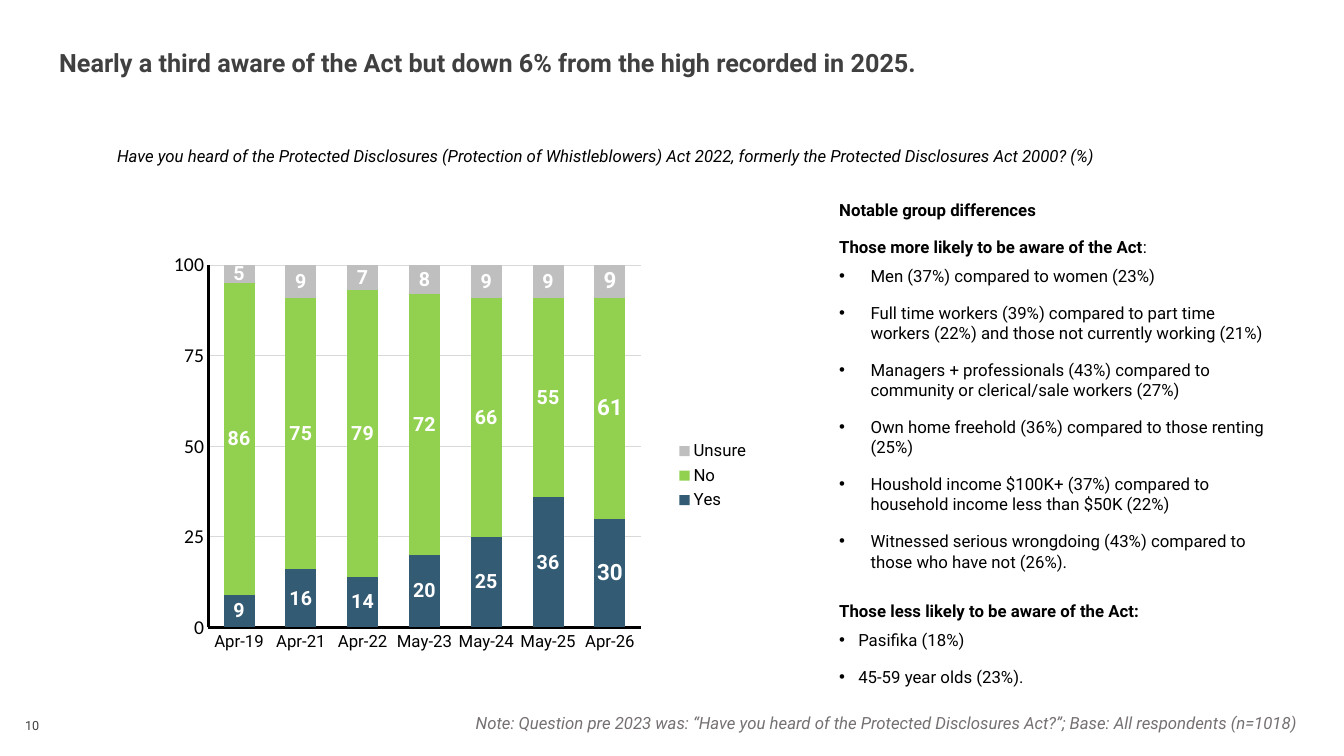
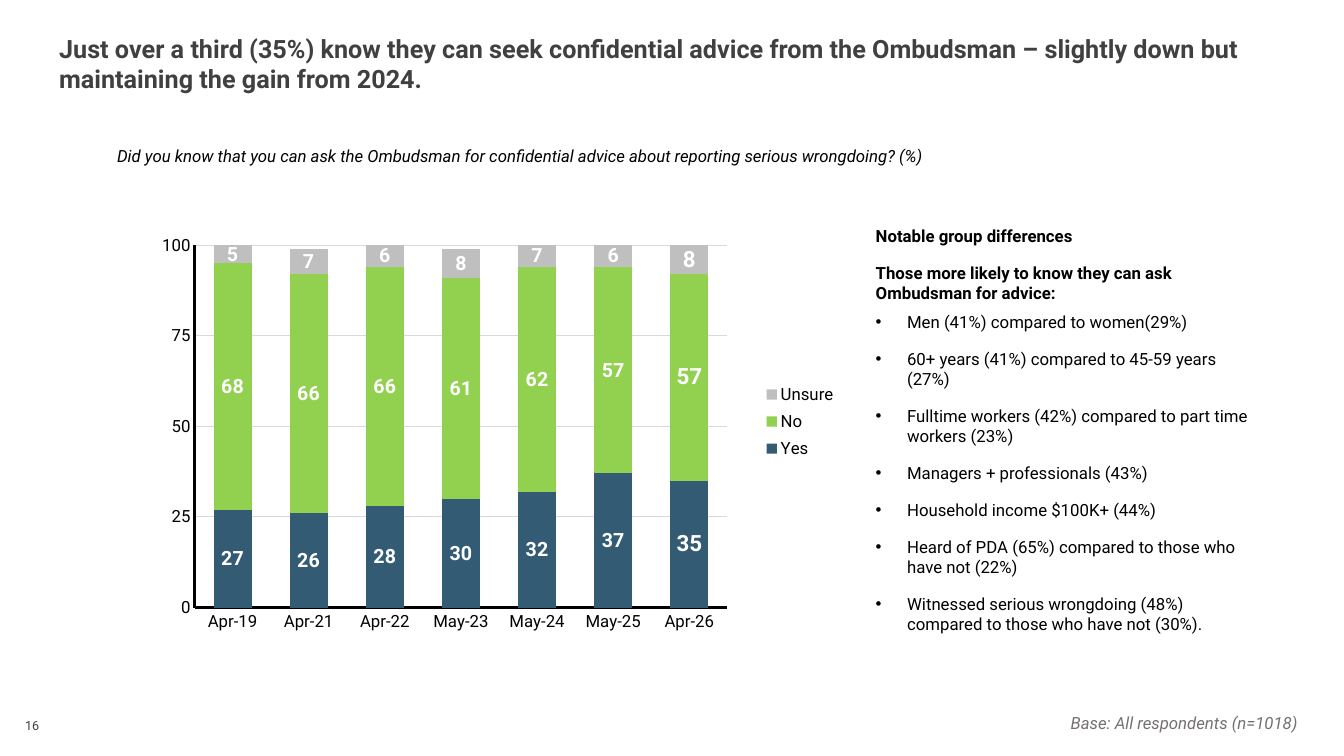
from dataclasses import dataclass
from lxml.etree import SubElement as Sub
from pptx import Presentation
from pptx.chart.data import CategoryChartData as Data
from pptx.dml.color import RGBColor as Rgb
from pptx.enum.chart import XL_CHART_TYPE as Kind, XL_LEGEND_POSITION as Side, XL_TICK_MARK as Tick
from pptx.enum.shapes import MSO_SHAPE as Form
from pptx.enum.text import MSO_ANCHOR as Anchor, MSO_AUTO_SIZE as Fit, PP_ALIGN as Align
from pptx.oxml.ns import qn
from pptx.util import Cm, Pt


@dataclass(frozen=True)
class Theme:
    """Colours, fonts and type sizes of the deck."""
    font: str = "Roboto"
    alt: str = "Calibri"
    ink: str = "000000"
    dark: str = "404040"
    grey: str = "767171"
    grid: str = "D9D9D9"
    white: str = "FFFFFF"
    bars: tuple = ("335B74", "92D050", "BFBFBF")
    title: int = 18
    body: int = 12
    label: int = 14
    last: int = 16
    page: int = 9


T = Theme()
DATES = ("Apr-19", "Apr-21", "Apr-22", "May-23", "May-24", "May-25", "Apr-26")
NAMES = ("Yes", "No", "Unsure")


def style(font, size, color=T.ink, bold=False, ital=False, face=T.font):
    """Set the look of a font."""
    font.name, font.size, font.bold, font.italic = face, Pt(size), bold, ital
    font.color.rgb = Rgb.from_string(color)


def write(par, text, *look, **more):
    """Add one styled run to a paragraph."""
    run = par.add_run()
    run.text = text
    style(run.font, *look, **more)


def setup(frame, pad=(0.25, 0.13, 0.25, 0.13), anchor=Anchor.TOP):
    """Set wrapping, insets and anchor of a text frame."""
    frame.word_wrap, frame.auto_size, frame.vertical_anchor = True, Fit.NONE, anchor
    frame.margin_left, frame.margin_top, frame.margin_right, frame.margin_bottom = map(Cm, pad)


def head(slide, box, text):
    """Place and fill the title placeholder."""
    title = slide.shapes.title
    title.left, title.top, title.width, title.height = map(Cm, box)
    setup(title.text_frame)
    par = title.text_frame.paragraphs[0]
    par.alignment = Align.LEFT
    write(par, text, T.title, T.dark, bold=True)


def line(slide, box, text, size, color, align=Align.LEFT, ital=True, gap=1.0, **frame):
    """Add a text box with a single paragraph."""
    shape = slide.shapes.add_textbox(*map(Cm, box))
    setup(shape.text_frame, **frame)
    par = shape.text_frame.paragraphs[0]
    par.alignment, par.line_spacing = align, gap
    write(par, text, size, color, ital=ital)


def bullet(par, inset):
    """Give a paragraph a bullet with a hanging indent in cm."""
    props = par._p.get_or_add_pPr()
    props.set("marL", str(Cm(inset)))
    props.set("indent", str(-Cm(inset)))
    Sub(props, qn("a:buFont"), typeface="Arial")
    Sub(props, qn("a:buChar"), char="•")


def panel(slide, box, groups):
    """Add the group differences beside the chart."""
    shape = slide.shapes.add_shape(Form.RECTANGLE, *map(Cm, box))
    shape.shadow.inherit = False
    shape.fill.background()
    shape.line.color.rgb = Rgb.from_string(T.white)
    shape.line.width = Pt(1)
    frame = shape.text_frame
    setup(frame, anchor=Anchor.MIDDLE)
    par = frame.paragraphs[0]
    par.alignment, par.space_after = Align.LEFT, Pt(12)
    write(par, "Notable group differences", T.body, bold=True)
    for rank, (lead, tail, inset, items) in enumerate(groups):
        par = frame.add_paragraph()
        par.alignment, par.space_before = Align.LEFT, Pt(15 if rank else 0)
        write(par, lead, T.body, bold=True)
        if tail:
            write(par, tail, T.body)
        for item in items:
            par = frame.add_paragraph()
            par.alignment = Align.LEFT
            par.space_before = par.space_after = Pt(6)
            bullet(par, inset)
            write(par, item, T.body)


def layout(node, place, index, inner=False):
    """Fix a chart part at fractions of the chart."""
    for old in node.findall(qn("c:layout")):
        node.remove(old)
    outer = Sub(node, qn("c:layout"))
    node.insert(index, outer)
    part = Sub(outer, qn("c:manualLayout"))
    if inner:
        Sub(part, qn("c:layoutTarget"), val="inner")
    for key in ("xMode", "yMode"):
        Sub(part, qn("c:" + key), val="edge")
    for key, val in zip("xywh", place):
        Sub(part, qn("c:" + key), val=str(val))


def axes(chart, look):
    """Format both axes, the value axis with its own font."""
    for axis in (chart.category_axis, chart.value_axis):
        axis.major_tick_mark = axis.minor_tick_mark = Tick.NONE
        axis.format.line.color.rgb = Rgb.from_string(T.ink)
        axis.format.line.width = Pt(2)
        style(axis.tick_labels.font, T.body)
    val = chart.value_axis
    style(val.tick_labels.font, **look)
    val.minimum_scale, val.maximum_scale, val.major_unit = 0, 100, 25
    val.tick_labels.number_format = "0"
    val.tick_labels.number_format_is_linked = False
    val.has_major_gridlines = True
    grid = val.major_gridlines.format.line
    grid.color.rgb = Rgb.from_string(T.grid)
    grid.width = Pt(0.75)


def graph(slide, box, rows, area, key, look):
    """Add the stacked columns with labels and legend."""
    data = Data(number_format="0")
    data.categories = DATES
    for name, row in zip(NAMES, rows):
        data.add_series(name, row)
    chart = slide.shapes.add_chart(Kind.COLUMN_STACKED, *map(Cm, box), data).chart
    chart.has_title = False
    style(chart.font, T.label, face=T.alt)
    axes(chart, look)
    plot = chart.plots[0]
    plot.gap_width, plot.overlap, plot.vary_by_categories = 100, 100, False
    for bar, color in zip(plot.series, T.bars):
        bar.invert_if_negative = False
        bar.format.fill.solid()
        bar.format.fill.fore_color.rgb = Rgb.from_string(color)
        tags = bar.data_labels
        tags.show_value, tags.number_format, tags.number_format_is_linked = True, "0", False
        style(tags.font, T.label, T.white, bold=True)
        final = bar.points[len(DATES) - 1].data_label
        style(final.font, T.last, T.white, bold=True)
    chart.has_legend = True
    legend = chart.legend
    legend.position, legend.include_in_layout = Side.RIGHT, False
    style(legend.font, T.body)
    layout(legend._element, key, 1)
    layout(chart._chartSpace.chart.plotArea, area, 0, inner=True)


def page(deck, num, title, ask, note, chart, side):
    """Build one survey slide."""
    slide = deck.slides.add_slide(deck.slide_layouts[5])
    graph(slide, **chart)
    line(slide, (2.95, 3.68, 27.66, 0.7), ask, T.body, T.ink, pad=(0, 0, 0.25, 0))
    line(slide, (1.14, 18.01, 31.57, 0.56), note, T.body, T.grey, Align.RIGHT,
         gap=0.9, pad=(0, 0, 0, 0))
    line(slide, (0, 17.78, 1.24, 1.02), str(num), T.page, T.dark, Align.RIGHT,
         ital=False, anchor=Anchor.MIDDLE)
    panel(slide, **side)
    head(slide, *title)


def main():
    """Build the deck and save it."""
    deck = Presentation()
    deck.slide_width, deck.slide_height = Cm(33.87), Cm(19.05)
    page(
        deck, 10,
        ((1.24, 1.07, 31.93, 1.24),
         "Nearly a third aware of the Act but down 6% from the high recorded in 2025."),
        "Have you heard of the Protected Disclosures (Protection of Whistleblowers) Act 2022, "
        "formerly the Protected Disclosures Act 2000? (%)",
        "Note: Question pre 2023 was: “Have you heard of the Protected Disclosures Act?”; "
        "Base: All respondents (n=1018)",
        dict(box=(0.2, 5.94, 20.19, 12.34),
             rows=((9, 16, 14, 20, 25, 36, 30), (86, 75, 79, 72, 66, 55, 61),
                   (5, 9, 7, 8, 9, 9, 9)),
             area=(0.25, 0.06, 0.54, 0.74), key=(0.82, 0.41, 0.12, 0.16),
             look=dict(size=T.label, face=T.alt)),
        dict(box=(20.9, 5, 11.28, 12.34), groups=(
            ("Those more likely to be aware of the Act", ":", 0.79, (
                "Men (37%) compared to women (23%)",
                "Full time workers (39%) compared to part time workers (22%) "
                "and those not currently working (21%)",
                "Managers + professionals (43%) compared to community or "
                "clerical/sale workers (27%)",
                "Own home freehold (36%) compared to those renting (25%)",
                "Houshold income $100K+ (37%) compared to household income less than $50K (22%)",
                "Witnessed serious wrongdoing (43%) compared to those who have not (26%).")),
            ("Those less likely to be aware of the Act:", "", 0.48, (
                "Pasifika (18%)", "45-59 year olds (23%).")))))
    page(
        deck, 16,
        ((1.24, 0.71, 31.04, 2.16),
         "Just over a third (35%) know they can seek confidential advice from the Ombudsman "
         "– slightly down but maintaining the gain from 2024."),
        "Did you know that you can ask the Ombudsman for confidential advice about reporting "
        "serious wrongdoing? (%)",
        "Base: All respondents (n=1018)",
        dict(box=(2.46, 5.44, 20.35, 12.34),
             rows=((27, 26, 28, 30, 32, 37, 35), (68, 66, 66, 61, 62, 57, 57),
                   (5, 7, 6, 8, 7, 6, 8)),
             area=(0.12, 0.06, 0.66, 0.74), key=(0.81, 0.33, 0.12, 0.18),
             look=dict(size=T.body)),
        dict(box=(21.82, 4.78, 10.24, 12.12), groups=(
            ("Those more likely to know they can ask Ombudsman for advice:", "", 0.79, (
                "Men (41%) compared to women(29%)",
                "60+ years (41%) compared to 45-59 years (27%)",
                "Fulltime workers (42%) compared to part time workers (23%)",
                "Managers + professionals (43%)",
                "Household income $100K+ (44%)",
                "Heard of PDA (65%) compared to those who have not (22%)",
                "Witnessed serious wrongdoing (48%) compared to those who have not (30%).")),)))
    deck.save("out.pptx")


if __name__ == "__main__":
    main()
